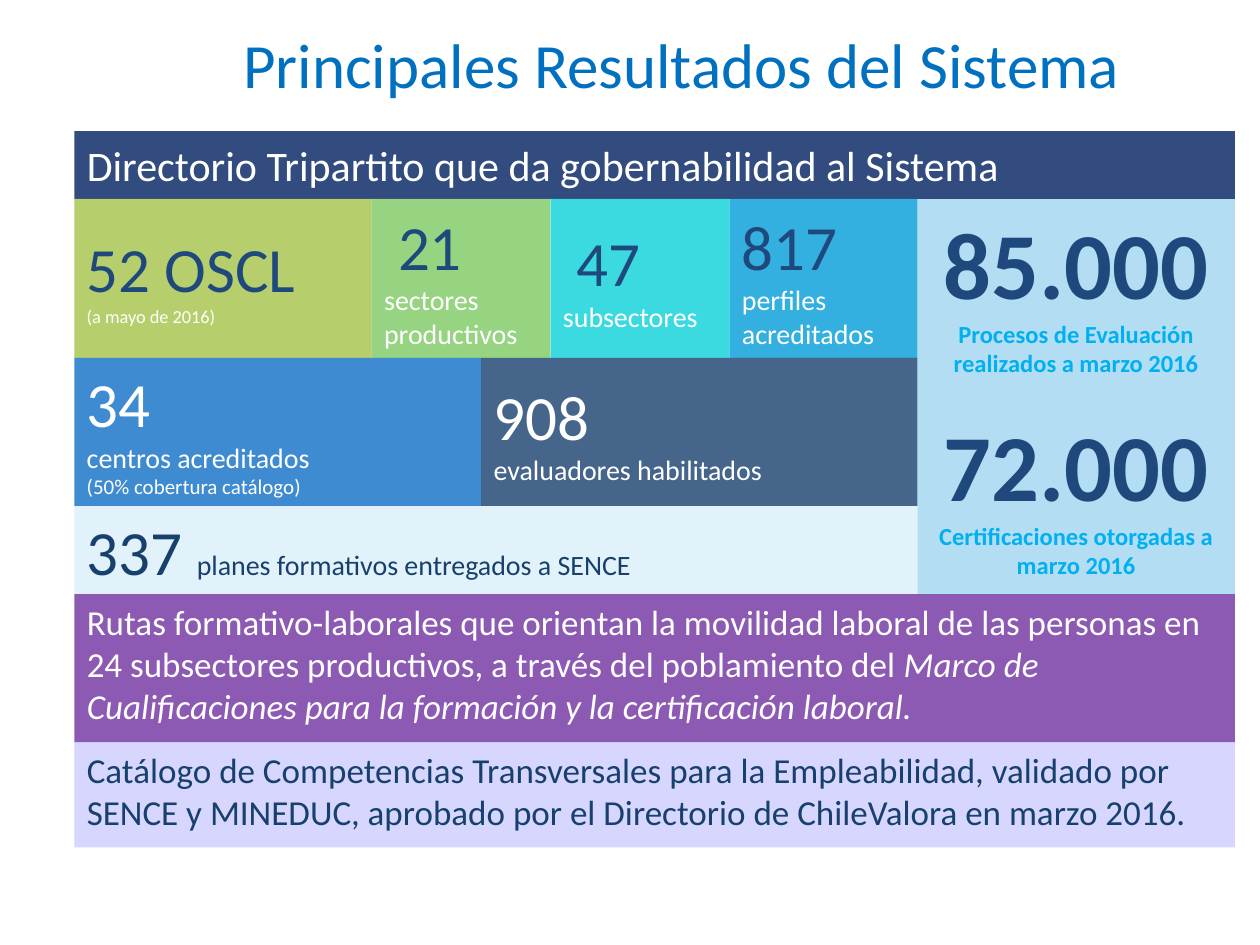
import pptx
import pptx.util
import pptx.dml.color
import pptx.enum.shapes
import pptx.enum.text
import lxml.etree

Pt = pptx.util.Pt
ALIGN = pptx.enum.text.PP_ALIGN
ANCHOR = pptx.enum.text.MSO_ANCHOR
DRAW = "http://schemas.openxmlformats.org/drawingml/2006/main"

HUES = {
    "title": "0070C0", "panel": "B3DDF2", "sky": "00B0F0", "figure": "1F497D",
    "white": "FFFFFF", "ink": "17406D", "board": "002060", "olive": "A5C249",
    "green": "7CCA62", "aqua": "0BD0D9", "cyan": "009DD9", "blue": "0F6FC6",
    "pale": "DBEFF9", "purple": "7030A0", "lilac": "CCCCFF",
}


def color(name):
    return pptx.dml.color.RGBColor.from_string(HUES[name])


def text(words, size=16, hue="white", bold=False, italic=False, indent=0, before=0, joined=False):
    return dict(words=words, size=size, hue=hue, bold=bold, italic=italic,
                indent=indent, before=before, joined=joined)


class Board:
    font = "Calibri"

    def __init__(self, deck):
        self.slide = deck.slides.add_slide(deck.slide_layouts[6])

    def fill(self, frame, items, align, anchor, spacing=None):
        frame.word_wrap = True
        frame.vertical_anchor = anchor
        para = frame.paragraphs[0]
        for order, item in enumerate(items):
            if order and not item["joined"]:
                para = frame.add_paragraph()
            if not item["joined"]:
                para.alignment = align
                para.line_spacing = spacing
                if item["before"]:
                    para.space_before = Pt(item["before"])
                if item["indent"]:
                    para._p.get_or_add_pPr().set("marL", str(Pt(item["indent"])))
            run = para.add_run()
            run.text = item["words"]
            font = run.font
            font.name = self.font
            font.size = Pt(item["size"])
            font.bold = item["bold"]
            font.italic = item["italic"]
            font.color.rgb = color(item["hue"])

    def title(self, left, top, right, base, item):
        box = self.slide.shapes.add_textbox(Pt(left), Pt(top), Pt(right - left), Pt(base - top))
        self.fill(box.text_frame, [item], ALIGN.CENTER, ANCHOR.MIDDLE, 1.1)

    def tile(self, left, top, right, base, hue, *items, alpha=80, align=ALIGN.LEFT, anchor=ANCHOR.MIDDLE):
        box = self.slide.shapes.add_shape(
            pptx.enum.shapes.MSO_SHAPE.RECTANGLE,
            Pt(left), Pt(top), Pt(right - left), Pt(base - top))
        box.shadow.inherit = False
        box.fill.solid()
        box.fill.fore_color.rgb = color(hue)
        box.line.fill.background()
        if alpha < 100:
            tint = box._element.spPr.find(f"{{{DRAW}}}solidFill")[0]
            lxml.etree.SubElement(tint, f"{{{DRAW}}}alpha").set("val", str(alpha * 1000))
        self.fill(box.text_frame, items, align, anchor)


def main():
    deck = pptx.Presentation()
    deck.slide_width, deck.slide_height = Pt(720), Pt(540)
    board = Board(deck)
    left, side, right = 42.5, 524.2, 705.6
    head, first, second, third, routes, skills, end = 74.9, 113.7, 204.5, 289.2, 339.5, 424.2, 484.2

    board.title(72.7, 8.6, 706.3, 59.8, text("Principales Resultados del Sistema", 36, "title"))
    board.tile(side, first, right, routes, "panel",
               text("85.000", 54, "figure", bold=True),
               text("Procesos de Evaluación realizados a marzo 2016", 14, "sky", bold=True),
               text("72.000", 54, "figure", bold=True, before=17),
               text("Certificaciones otorgadas a marzo 2016", 14, "sky", bold=True),
               alpha=100, align=ALIGN.CENTER, anchor=ANCHOR.TOP)
    board.tile(left, head, right, first, "board",
               text("Directorio Tripartito que da gobernabilidad al Sistema", 24))

    edges = [left, 212.4, 314.6, 416.9, side]
    stats = [
        ("olive", "52 OSCL", 0, "(a mayo de 2016)", 10.5),
        ("green", "21", 8, "sectores productivos", 16),
        ("aqua", "47", 8, "subsectores", 16),
        ("cyan", "817", 0, "perfiles acreditados", 16),
    ]
    for start, stop, (hue, figure, indent, label, size) in zip(edges, edges[1:], stats):
        board.tile(start, first, stop, second, hue,
                   text(figure, 36, "figure", indent=indent), text(label, size))

    split = 275
    board.tile(left, second, split, third, "blue", text("34", 36),
               text("centros acreditados"), text("(50% cobertura catálogo)", 12))
    board.tile(split, second, side, third, "ink", text("908", 36),
               text("evaluadores habilitados"))
    board.tile(left, third, side, routes, "pale", text("337 ", 36, "ink"),
               text("planes formativos entregados a SENCE", 16, "ink", joined=True))
    board.tile(left, routes, right, skills, "purple",
               text("Rutas formativo-laborales que orientan la movilidad laboral de las personas "
                    "en 24 subsectores productivos, a través del poblamiento del ", 20),
               text("Marco de Cualificaciones para la formación y la certificación laboral.",
                    20, italic=True, joined=True), anchor=ANCHOR.TOP)
    board.tile(left, skills, right, end, "lilac",
               text("Catálogo de Competencias Transversales para la Empleabilidad, validado por "
                    "SENCE y MINEDUC, aprobado por el Directorio de ChileValora en marzo 2016.",
                    20, "ink"), anchor=ANCHOR.TOP)
    deck.save("out.pptx")


if __name__ == "__main__":
    main()
